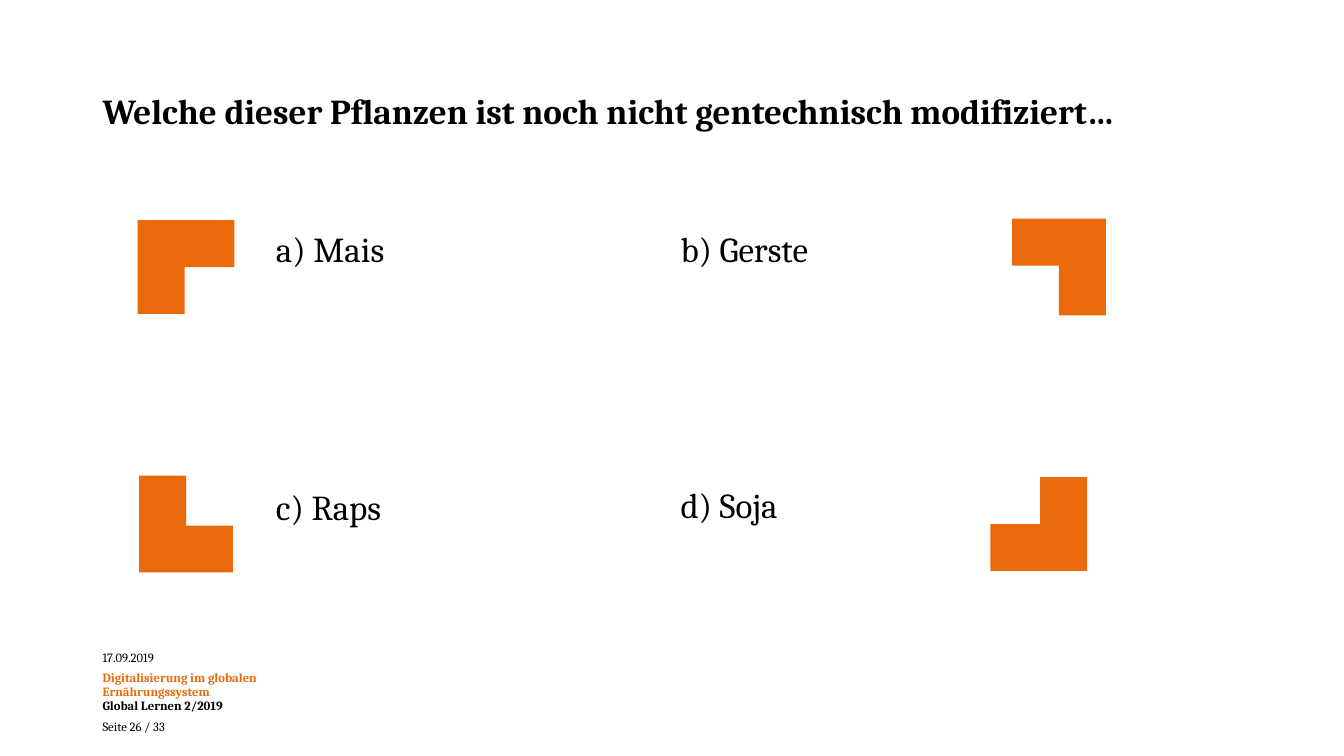
from pptx import Presentation
from pptx.dml.color import RGBColor
from pptx.enum.shapes import MSO_SHAPE
from pptx.enum.text import MSO_ANCHOR
from pptx.util import Pt

CORNER = MSO_SHAPE.CORNER
TOP, MIDDLE = MSO_ANCHOR.TOP, MSO_ANCHOR.MIDDLE
ORANGE = RGBColor(0xEA, 0x69, 0x0B)
BLACK = RGBColor(0, 0, 0)
FONT = "Cambria"

# Content
TITLE = "Welche dieser Pflanzen ist noch nicht gentechnisch modifiziert…"
ANSWERS = [  # text, left, top
    ("a) Mais", 190, 157),
    ("b) Gerste", 479, 157),
    ("c) Raps", 190, 341.2),
    ("d) Soja", 479, 340),
]
CORNERS = [  # left, top, rotation
    (99.4, 156.2, 90),
    (722.9, 156.2, 180),
    (99.4, 339.8, 0),
    (708.5, 339.8, 270),
]
FOOTER = [  # text, colour, bold, space after
    ("17.09.2019", BLACK, False, 4.5),
    ("Digitalisierung im globalen Ernährungssystem", ORANGE, True, 0),
    ("Global Lernen 2/2019", BLACK, True, 4.5),
    ("Seite 26 / 33", BLACK, False, 0),
]
CORNER_SIZE = (67, 69.1)
ANSWER_SIZE = (303, 93.6)

prs = Presentation()
prs.slide_width, prs.slide_height = Pt(960), Pt(540)
s = prs.slides.add_slide(prs.slide_layouts[6])


def add_text(box, lines, size, spacing, anchor=TOP):
    tf = s.shapes.add_textbox(*map(Pt, box)).text_frame
    tf.word_wrap = True
    tf.vertical_anchor = anchor
    for i, (text, color, bold, after) in enumerate(lines):
        p = tf.paragraphs[0] if i == 0 else tf.add_paragraph()
        p.line_spacing, p.space_after = spacing, Pt(after)
        r = p.add_run()
        r.text = text
        for name, value in {"name": FONT, "size": Pt(size), "bold": bold}.items():
            setattr(r.font, name, value)
        r.font.color.rgb = color


# Footer and title
add_text((66.2, 461.5, 187.2, 68.4), FOOTER, 9, Pt(10))
add_text((66.2, 28.8, 828, 104.4), [(TITLE, BLACK, True, 0)], 25, 0.9, MIDDLE)

# Orange corners
for left, top, rotation in CORNERS:
    sp = s.shapes.add_shape(CORNER, Pt(left), Pt(top), *map(Pt, CORNER_SIZE))
    sp.rotation = rotation
    sp.shadow.inherit = False
    sp.fill.solid()
    sp.fill.fore_color.rgb = ORANGE
    sp.line.fill.background()

# Answers
for text, left, top in ANSWERS:
    add_text((left, top, *ANSWER_SIZE), [(text, BLACK, False, 0)], 25, 1.07)

prs.save("out.pptx")
